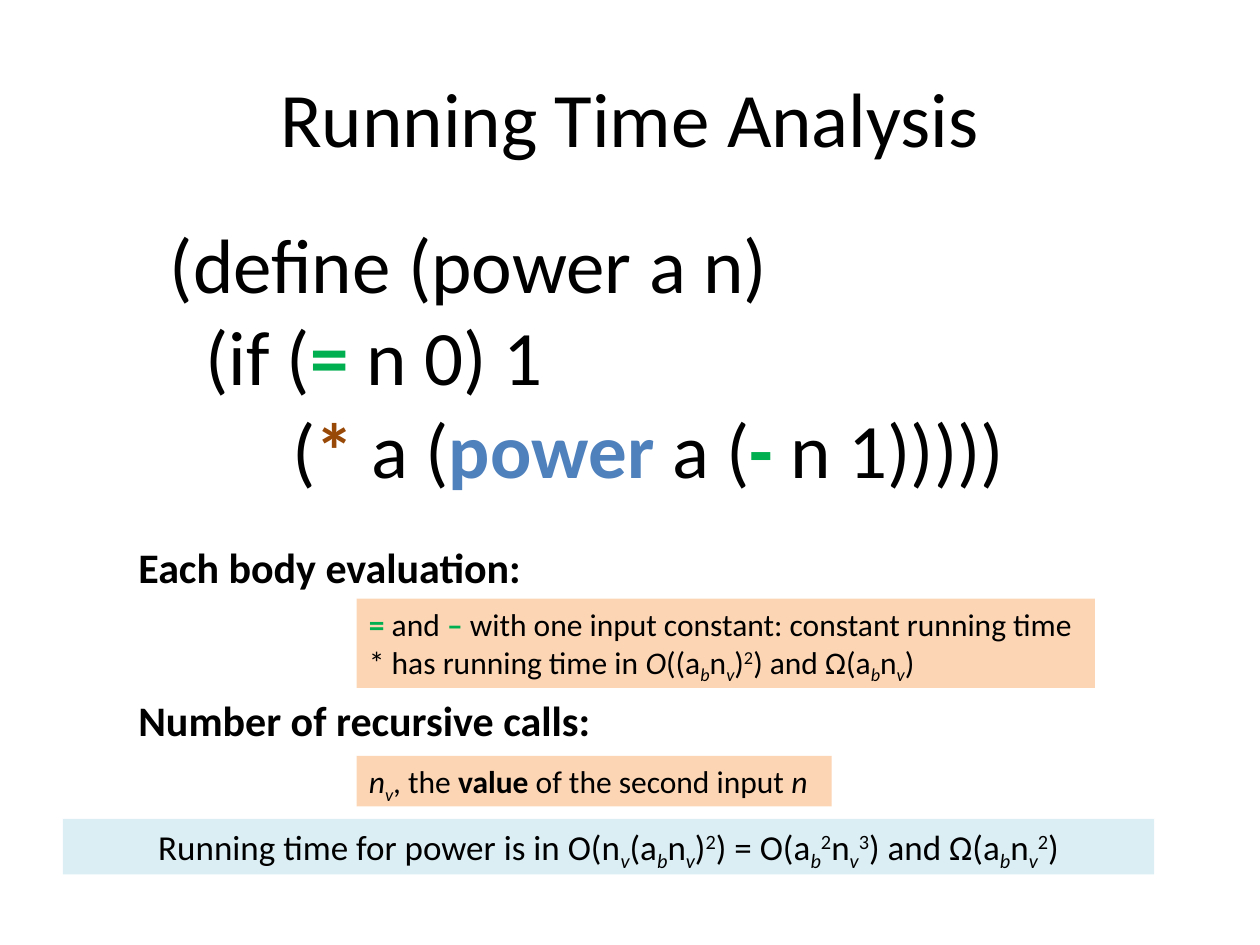
"""Build the slide on the running time of the power procedure."""
from pptx import Presentation
from pptx.dml.color import RGBColor
from pptx.enum.shapes import MSO_SHAPE
from pptx.enum.text import MSO_ANCHOR, MSO_AUTO_SIZE, PP_ALIGN
from pptx.util import Inches, Pt

RECTANGLE = MSO_SHAPE.RECTANGLE
TOP, MIDDLE = MSO_ANCHOR.TOP, MSO_ANCHOR.MIDDLE
LEFT, CENTER = PP_ALIGN.LEFT, PP_ALIGN.CENTER
GROW = MSO_AUTO_SIZE.SHAPE_TO_FIT_TEXT

FONT = "Calibri"
COLORS = {
    "text": "000000",
    "constant": "00B050",
    "multiply": "984807",
    "recursion": "4F81BD",
    "detail": "FCD5B5",
    "result": "DBEEF4",
}
CONSTANT = {"color": "constant", "bold": True}
MULTIPLY = {"color": "multiply", "bold": True}
RECURSION = {"color": "recursion", "bold": True}
BOLD = {"bold": True}
ITALIC = {"italic": True}
SUBSCRIPT = {"italic": True, "baseline": -25000}
SUPERSCRIPT = {"baseline": 30000}
SCRIPTS = {"_": SUBSCRIPT, "^": SUPERSCRIPT}


def formula(notation):
    """Split notation into runs, where _ and ^ lower or raise the next character."""
    runs, plain, style = [], "", None
    for char in notation:
        if style is not None:
            runs.append((char, style))
            style = None
        elif char in SCRIPTS:
            runs.append((plain, {}))
            plain, style = "", SCRIPTS[char]
        else:
            plain += char
    runs.append((plain, {}))
    return [run for run in runs if run[0]]


def add_run(paragraph, text, size, color="text", bold=False, italic=False, baseline=0):
    """Append one formatted run to a paragraph."""
    run = paragraph.add_run()
    run.text = text
    font = run.font
    font.name, font.size, font.bold, font.italic = FONT, Pt(size), bold, italic
    font.color.rgb = RGBColor.from_string(COLORS[color])
    if baseline:
        run._r.get_or_add_rPr().set("baseline", str(baseline))


def write_lines(holder, lines, size, align=LEFT, anchor=TOP, wrap=True):
    """Write lines of runs into a shape and return their paragraphs."""
    frame = holder.text_frame
    frame.word_wrap, frame.vertical_anchor = wrap, anchor
    if anchor == TOP:
        frame.auto_size = GROW
    for number, runs in enumerate(lines):
        paragraph = frame.add_paragraph() if number else frame.paragraphs[0]
        paragraph.alignment = align
        for text, style in runs:
            add_run(paragraph, text, size, **style)
    return frame.paragraphs


def add_text(slide, box, lines, size, **layout):
    """Add a plain text box and return its paragraphs."""
    holder = slide.shapes.add_textbox(*map(Inches, box))
    return write_lines(holder, lines, size, **layout)


def add_panel(slide, box, fill, lines, size, **layout):
    """Add a filled rectangle without outline that holds text."""
    panel = slide.shapes.add_shape(RECTANGLE, *map(Inches, box))
    panel.shadow.inherit = False
    panel.fill.solid()
    panel.fill.fore_color.rgb = RGBColor.from_string(COLORS[fill])
    panel.line.fill.background()
    write_lines(panel, lines, size, **layout)


def add_code(slide):
    """Add the power procedure with its indented body."""
    code = [
        [("(define (power a n)", {})],
        [("(if (", {}), ("=", CONSTANT), (" n 0) 1", {})],
        [("(", {}), ("*", MULTIPLY), (" a (", {}), ("power", RECURSION),
         (" a (", {}), ("-", CONSTANT), (" n 1)))))", {})],
    ]
    paragraphs = add_text(slide, (1.25, 1.67, 6.86, 2.32), code, 44, wrap=False)
    for paragraph, indent in zip(paragraphs, (0, 0.28, 0.97)):
        paragraph._p.get_or_add_pPr().set("marL", str(Inches(indent)))


def add_analysis(slide):
    """Add the two questions, their answers and the resulting bounds."""
    questions = [
        [("Each body evaluation:", BOLD)],
        [("Number of recursive calls:", BOLD)],
    ]
    paragraphs = add_text(slide, (1, 4.25, 8, 1.72), questions, 24)
    paragraphs[1].space_before = Pt(58.5)

    calls = [[("n", ITALIC), ("v", SUBSCRIPT), (", the ", {}), ("value", BOLD),
              (" of the second input ", {}), ("n", ITALIC)]]
    add_panel(slide, (2.83, 6, 3.77, 0.4), "detail", calls, 18, wrap=False)

    evaluation = [
        [("=", CONSTANT), (" and ", {}), ("–", CONSTANT),
         (" with one input constant: constant running time", {})],
        [("* has running time in ", {}), ("O", ITALIC),
         *formula("((a_bn_v)^2) and Ω(a_bn_v)")],
    ]
    add_panel(slide, (2.83, 4.75, 5.86, 0.71), "detail", evaluation, 18, wrap=False)

    bounds = [formula("Running time for power is in "
                      "O(n_v(a_bn_v)^2) = O(a_b^2n_v^3) and Ω(a_bn_v^2)")]
    add_panel(slide, (0.5, 6.5, 8.66, 0.44), "result", bounds, 20, align=CENTER)


def main():
    """Create and save the presentation."""
    deck = Presentation()
    deck.slide_width, deck.slide_height = Inches(10), Inches(7.5)
    slide = deck.slides.add_slide(deck.slide_layouts[6])
    add_text(slide, (0.5, 0.3, 9, 1.25), [[("Running Time Analysis", {})]], 44,
             align=CENTER, anchor=MIDDLE)
    add_code(slide)
    add_analysis(slide)
    deck.save("out.pptx")


if __name__ == "__main__":
    main()
